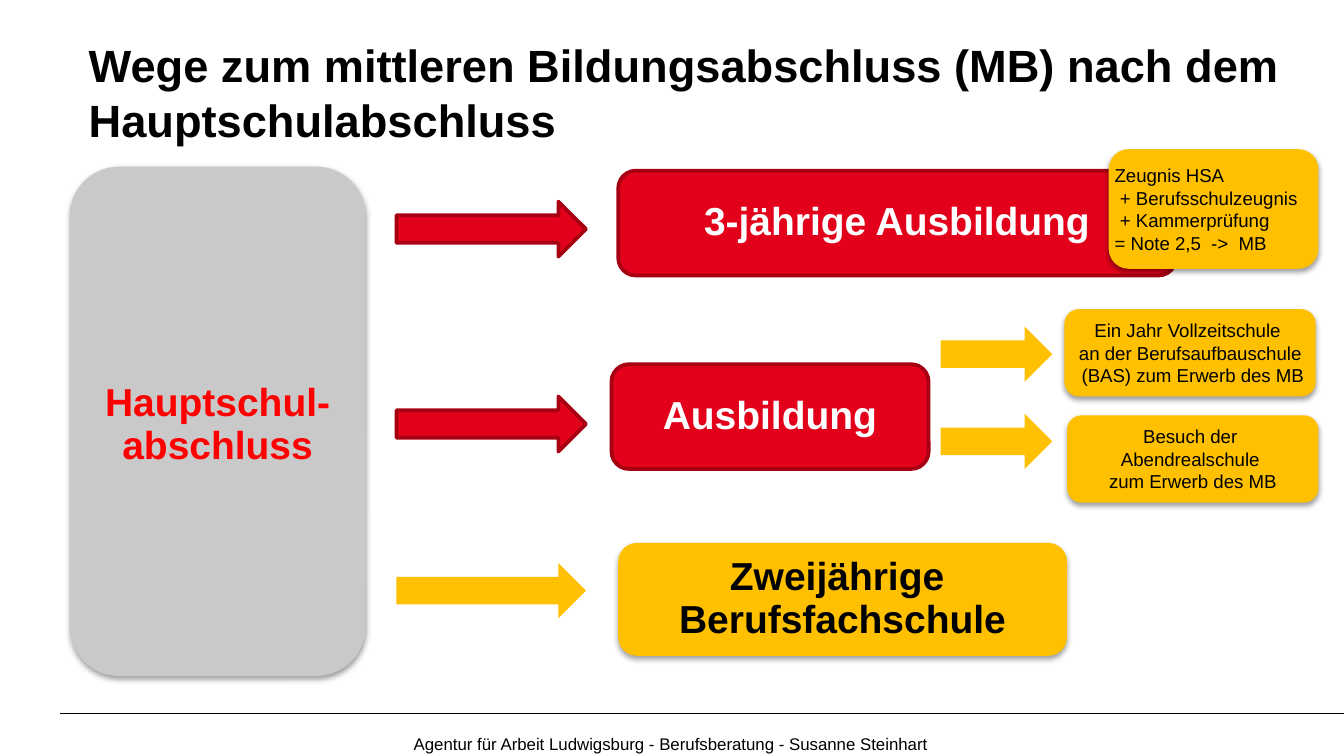
from lxml.etree import SubElement
from pptx import Presentation
from pptx.dml.color import RGBColor
from pptx.enum.shapes import MSO_CONNECTOR, MSO_SHAPE
from pptx.enum.text import MSO_ANCHOR, MSO_AUTO_SIZE, PP_ALIGN
from pptx.oxml.ns import qn
from pptx.util import Inches, Pt

RED, EDGE, GOLD, GREY = "E2001A", "A70013", "FFC000", "C9C9C9"
BLACK, WHITE, BRIGHT = "000000", "FFFFFF", "FF0000"
BIG = {"size": Pt(20.9), "bold": True}
SMALL = {"size": Pt(10), "bold": False}


def color(code):
    return RGBColor.from_string(code)


def write(frame, lines, look, ink, align=PP_ALIGN.CENTER, gap=1.0, pad=(0, 0, 0, 0)):
    """Fill a text frame, one paragraph per line."""
    frame.word_wrap = True
    frame.auto_size = MSO_AUTO_SIZE.NONE
    sides = ("left", "top", "right", "bottom")
    for side, size in zip(sides, pad):
        setattr(frame, f"margin_{side}", Inches(size))
    for i, line in enumerate(lines):
        para = frame.paragraphs[0] if i == 0 else frame.add_paragraph()
        para.text = line
        para.alignment = align
        para.line_spacing = gap
        para.space_before = Pt(0)
        for run in para.runs:
            run.font.name = "Arial"
            run.font.color.rgb = color(ink)
            for name, value in look.items():
                setattr(run.font, name, value)


def shade(shape):
    """Give a shape a soft shadow straight below it."""
    effects = shape._element.spPr.find(qn("a:effectLst"))
    outer = SubElement(effects, qn("a:outerShdw"), blurRad=str(Pt(3.1)),
                       dist=str(Pt(1.6)), dir="5400000", rotWithShape="0")
    black = SubElement(outer, qn("a:srgbClr"), val=BLACK)
    SubElement(black, qn("a:alpha"), val="38000")


def block(slide, kind, at, fill):
    """Draw a filled shape; red ones carry a dark edge."""
    shape = slide.shapes.add_shape(kind, *map(Inches, at))
    shape.shadow.inherit = False
    shape.fill.solid()
    shape.fill.fore_color.rgb = color(fill)
    if fill == RED:
        shape.line.color.rgb = color(EDGE)
        shape.line.width = Pt(2)
    else:
        shape.line.fill.background()
    return shape


def box(slide, at, fill, lines, look, ink, **more):
    shape = block(slide, MSO_SHAPE.ROUNDED_RECTANGLE, at, fill)
    if fill != RED:
        shade(shape)
    shape.text_frame.vertical_anchor = MSO_ANCHOR.MIDDLE
    write(shape.text_frame, lines, look, ink, **more)
    return shape


def arrow(slide, left, top, width, fill):
    block(slide, MSO_SHAPE.RIGHT_ARROW, (left, top, width, 0.41), fill)


def head(slide, text):
    title = slide.shapes.title
    spot = {"left": 0.56, "top": 0.23, "width": 9.24, "height": 0.78}
    for name, value in spot.items():
        setattr(title, name, Inches(value))
    title.text_frame.vertical_anchor = MSO_ANCHOR.TOP
    write(title.text_frame, [text], {"size": Pt(24.2), "bold": True}, BLACK,
          align=PP_ALIGN.LEFT, pad=(0.1, 0.05, 0.1, 0))


def foot(slide, text):
    rule = slide.shapes.add_connector(
        MSO_CONNECTOR.STRAIGHT, *map(Inches, (0.45, 5.31, 10, 5.31)))
    rule.line.color.rgb = color(BLACK)
    rule.line.width = Pt(0.5)
    SubElement(rule._element.spPr, qn("a:effectLst"))
    note = slide.shapes.add_textbox(*map(Inches, (2.98, 5.41, 6.16, 0.21)))
    write(note.text_frame, [text], {"size": Pt(9)}, BLACK,
          align=PP_ALIGN.LEFT, pad=(0.1, 0.05, 0.1, 0.05))


def main():
    # Wide page, 16 by 9
    deck = Presentation()
    deck.slide_width = Inches(10)
    deck.slide_height = Inches(10) * 9 // 16
    slide = deck.slides.add_slide(deck.slide_layouts[5])

    head(slide, "Wege zum mittleren Bildungsabschluss (MB) nach dem Hauptschulabschluss")
    foot(slide, "Agentur für Arbeit Ludwigsburg - Berufsberatung - Susanne Steinhart")

    # Starting point and the three ways out of it
    box(slide, (0.52, 1.24, 2.2, 3.79), GREY, ["Hauptschul-abschluss"],
        BIG, BRIGHT, gap=0.9, pad=(0.07, 0.06, 0.07, 0))
    for top, fill in ((1.5, RED), (2.95, RED), (4.19, GOLD)):
        arrow(slide, 2.95, top, 1.41, fill)

    # Schools and trainings
    ways = (
        ((4.6, 1.27, 4.15, 0.78), RED, "3-jährige Ausbildung", WHITE),
        ((4.55, 2.71, 2.36, 0.78), RED, "Ausbildung", WHITE),
        ((4.6, 4.04, 3.34, 0.84), GOLD, "Zweijährige \vBerufsfachschule", BLACK),
    )
    for at, fill, text, ink in ways:
        box(slide, at, fill, [text], BIG, ink, gap=0.9)

    # Grades needed after the three-year training
    note = box(slide, (8.25, 1.11, 1.56, 0.89), GOLD,
               ["Zeugnis HSA", "+ Berufsschulzeugnis", "+ Kammerprüfung",
                "= Note 2,5  ->  MB"], SMALL, BLACK, align=PP_ALIGN.LEFT)
    for para in note.text_frame.paragraphs[1:3]:
        para._p.get_or_add_pPr().set("marL", str(Inches(0.04)))

    # Two ways on after the training
    for top in (2.43, 3.08):
        arrow(slide, 7, top, 0.83, GOLD)
    box(slide, (7.92, 2.3, 1.87, 0.65), GOLD,
        ["Ein Jahr Vollzeitschule ", "an der Berufsaufbauschule",
         " (BAS) zum Erwerb des MB"], SMALL, BLACK)
    box(slide, (7.94, 3.09, 1.87, 0.65), GOLD,
        ["Besuch der ", "Abendrealschule \vzum Erwerb des MB"], SMALL, BLACK)

    deck.save("out.pptx")


if __name__ == "__main__":
    main()
